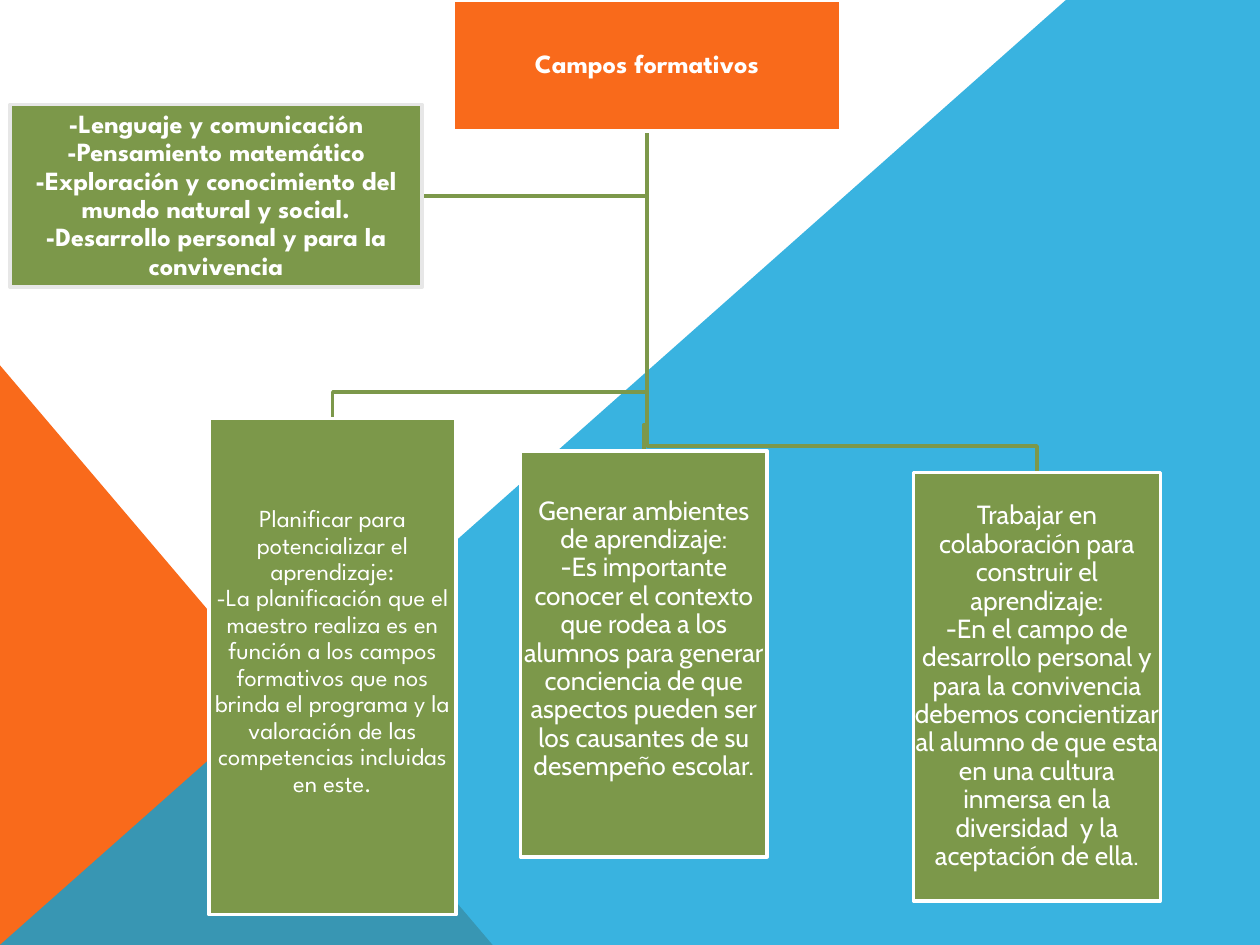
from dataclasses import dataclass

import pptx
import pptx.dml.color
import pptx.enum.shapes
import pptx.enum.text
import pptx.oxml.ns
import pptx.util
from lxml import etree

Inches = pptx.util.Inches
Pt = pptx.util.Pt
SHAPE = pptx.enum.shapes.MSO_SHAPE

COLORS = {
    "orange": "F96A1B",
    "blue": "08A1D9",
    "green": "7C984A",
    "white": "FFFFFF",
    "gray": "E7E7E7",
}
GAP = 0.21  # from a crossbar down to the box below it
PAD = 0.01


@dataclass
class Box:
    left: float
    top: float
    width: float
    height: float
    lines: list[str]
    font: str = "League Spartan"
    size: int = 15
    bold: bool = False
    fill: str = "green"
    edge: str = "white"
    foot: float = PAD  # bottom inset

    @property
    def mid(self) -> float:
        return self.left + self.width / 2


ROOT = Box(3.6, 0, 3.07, 1.04, ["Campos formativos"], bold=True, fill="orange")
SIDE = Box(0.08, 0.83, 3.27, 1.45, [
    "-Lenguaje y comunicación",
    "-Pensamiento matemático",
    "-Exploración y conocimiento del mundo natural y social.",
    "-Desarrollo personal y para la convivencia",
], bold=True, edge="gray")
LEAVES = [
    Box(1.66, 3.32, 1.96, 3.94, [
        "Planificar para potencializar el aprendizaje:",
        "-La planificación que el maestro realiza es en función a los campos "
        "formativos que nos brinda el programa y la valoración de las "
        "competencias incluidas en este.",
    ], size=14, foot=0.24),
    Box(4.13, 3.58, 1.96, 3.22, [
        "Generar ambientes de aprendizaje:",
        "-Es importante conocer el contexto que rodea a los alumnos para "
        "generar conciencia de que aspectos pueden ser los causantes de su "
        "desempeño escolar.",
    ], font="Cabin", foot=0.24),
    Box(7.25, 3.75, 1.96, 3.4, [
        "Trabajar en colaboración para construir el aprendizaje:",
        "-En el campo de desarrollo personal y para la convivencia debemos "
        "concientizar al alumno de que esta en una cultura inmersa en la "
        "diversidad  y la aceptación de ella.",
    ], font="Cabin"),
]


def color(name: str) -> pptx.dml.color.RGBColor:
    return pptx.dml.color.RGBColor.from_string(COLORS[name])


def paint(shape, name: str) -> None:
    shape.shadow.inherit = False
    shape.fill.solid()
    shape.fill.fore_color.rgb = color(name)
    shape.line.fill.background()


def outline(shape, name: str) -> None:
    shape.line.color.rgb = color(name)
    shape.line.width = Pt(2)


def draw_free(slide, points: list[tuple[float, float]], close: bool):
    spots = [(Inches(x), Inches(y)) for x, y in points]
    form = slide.shapes.build_freeform(*spots[0], scale=1.0)
    form.add_line_segments(spots[1:], close=close)
    return form.convert_to_shape()


def draw_back(slide) -> None:
    wedge = slide.shapes.add_shape(
        SHAPE.RIGHT_TRIANGLE, 0, Inches(2.9), Inches(3.91), Inches(4.6))
    paint(wedge, "orange")
    field = draw_free(
        slide, [(0, 7.5), (8.46, 0), (10, 0), (10, 7.5)], close=True)
    paint(field, "blue")
    tint = field.fill._xPr.find(".//" + pptx.oxml.ns.qn("a:srgbClr"))
    etree.SubElement(tint, pptx.oxml.ns.qn("a:alpha"), val="80000")


def draw_link(slide, points: list[tuple[float, float]]) -> None:
    link = draw_free(slide, points, close=False)
    link.shadow.inherit = False
    link.fill.background()
    outline(link, "green")


def draw_box(slide, box: Box) -> None:
    shape = slide.shapes.add_shape(
        SHAPE.RECTANGLE, Inches(box.left), Inches(box.top),
        Inches(box.width), Inches(box.height))
    paint(shape, box.fill)
    outline(shape, box.edge)
    frame = shape.text_frame
    frame.word_wrap = True
    frame.vertical_anchor = pptx.enum.text.MSO_ANCHOR.MIDDLE
    frame.margin_left = frame.margin_right = frame.margin_top = Inches(PAD)
    frame.margin_bottom = Inches(box.foot)
    para = frame.paragraphs[0]
    para.alignment = pptx.enum.text.PP_ALIGN.CENTER
    para.line_spacing = 0.9
    for i, line in enumerate(box.lines):
        if i:
            para.add_line_break()
        run = para.add_run()
        run.text = line
        run.font.name = box.font
        run.font.size = Pt(box.size)
        run.font.bold = box.bold
        run.font.color.rgb = color("white")


def main() -> None:
    deck = pptx.Presentation()
    deck.slide_width, deck.slide_height = Inches(10), Inches(7.5)
    slide = deck.slides.add_slide(deck.slide_layouts[6])
    draw_back(slide)

    # Links from the root to the side box and the leaves
    start = (ROOT.mid, ROOT.top + ROOT.height)
    level = SIDE.top + SIDE.height / 2
    draw_link(slide, [start, (ROOT.mid, level),
                      (SIDE.left + SIDE.width, level)])
    for leaf in reversed(LEAVES):
        bar = leaf.top - GAP
        draw_link(slide, [start, (ROOT.mid, bar), (leaf.mid, bar),
                          (leaf.mid, leaf.top)])

    # Boxes
    for box in [ROOT, *LEAVES, SIDE]:
        draw_box(slide, box)
    deck.save("out.pptx")


if __name__ == "__main__":
    main()
